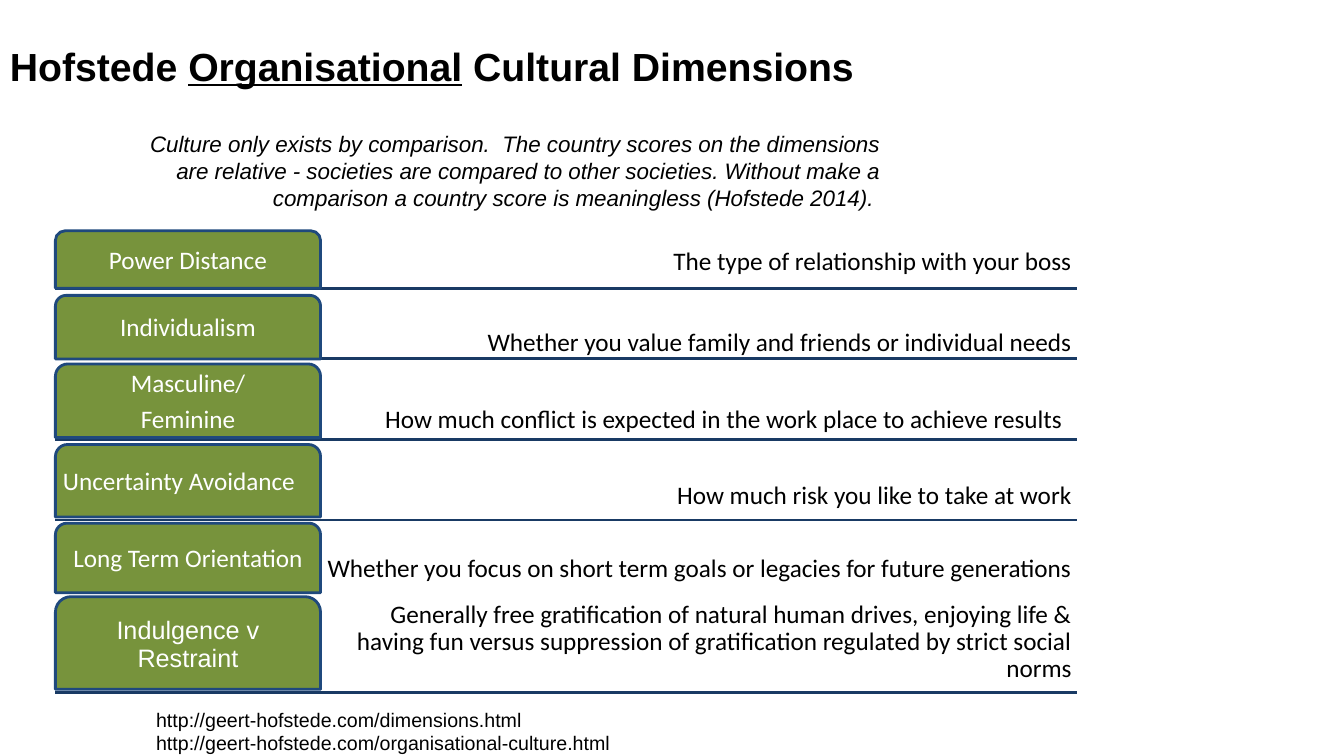
from pptx import Presentation
from pptx.dml.color import RGBColor
from pptx.enum import shapes, text
from pptx.oxml import ns, xmlchemy
from pptx.util import Pt

BLACK = RGBColor(0x00, 0x00, 0x00)
WHITE = RGBColor(0xFF, 0xFF, 0xFF)
GREEN = RGBColor(0x77, 0x93, 0x3C)
TAB_EDGE = RGBColor(0x1F, 0x49, 0x7D)
RULE_BLUE = RGBColor(0x19, 0x3A, 0x64)

LEFT, RIGHT, CENTER = (text.PP_ALIGN.LEFT, text.PP_ALIGN.RIGHT,
                       text.PP_ALIGN.CENTER)
TOP, MIDDLE, BOTTOM = (text.MSO_ANCHOR.TOP, text.MSO_ANCHOR.MIDDLE,
                       text.MSO_ANCHOR.BOTTOM)

ROW_LEFT, ROW_RIGHT = 39.6, 769
TAB_WIDTH = 189.4
MEANING_WIDTH = 539.3
ROW_INSET = 2.9

# Label, its format, tab top and height, meaning, its left, top and height
DIMENSIONS = [
    ("Power Distance", {}, 164.9, 41,
     "The type of relationship with your boss", 229, 154.8, 45),
    ("Individualism", {}, 211, 45.4,
     "Whether you value family and friends or individual needs",
     229, 191.5, 66.2),
    ("Masculine/\nFeminine", {}, 260, 52.6,
     "How much conflict is expected in the work place to achieve results",
     222.5, 247, 66.2),
    ("Uncertainty Avoidance", {"align": LEFT}, 317.5, 51.8,
     "How much risk you like to take at work", 229, 301, 66.2),
    ("Long Term Orientation", {}, 373.7, 49.7,
     "Whether you focus on short term goals or legacies for future generations",
     229, 352.8, 66.2),
    ("Indulgence v Restraint", {"font": "Arial"}, 426.2, 66.2,
     "Generally free gratification of natural human drives, enjoying life & "
     "having fun versus suppression of gratification regulated by strict "
     "social norms", 229, 424.8, 66.2),
]
RULE_HEIGHTS = [205.9, 256.3, 313.9, 371.5, 494.6]


def write(frame, content, font="Arial", size=18, color=BLACK, bold=False,
          italic=False, underlined=None, align=LEFT, anchor=TOP, inset=None,
          line_spacing=None, space_after=None):
    """Fill a text frame; each line of content is a paragraph."""
    frame.word_wrap = True
    frame.vertical_anchor = anchor
    if inset is not None:
        frame.margin_left = frame.margin_right = Pt(inset)
        frame.margin_top = frame.margin_bottom = Pt(inset)
    for index, line in enumerate(content.split("\n")):
        paragraph = frame.add_paragraph() if index else frame.paragraphs[0]
        paragraph.alignment = align
        paragraph.line_spacing = line_spacing
        if space_after is not None:
            paragraph.space_after = Pt(space_after)
        before, word, after = line.partition(underlined or "\n")
        for part in filter(None, (before, word, after)):
            run = paragraph.add_run()
            run.text = part
            run.font.name = font
            run.font.size = Pt(size)
            run.font.color.rgb = color
            run.font.bold = bold
            run.font.italic = italic
            run.font.underline = part == underlined


def write_row(frame, content, **changes):
    """Fill a text frame in the shared style of the dimension rows."""
    style = dict(font="Calibri", inset=ROW_INSET, line_spacing=0.9,
                 space_after=6.3)
    write(frame, content, **{**style, **changes})


def add_text_box(slide, left, top, width, height):
    box = slide.shapes.add_textbox(Pt(left), Pt(top), Pt(width), Pt(height))
    return box.text_frame


def add_rule(slide, height):
    rule = slide.shapes.add_connector(
        shapes.MSO_CONNECTOR.STRAIGHT,
        Pt(ROW_LEFT), Pt(height), Pt(ROW_RIGHT), Pt(height))
    rule.line.color.rgb = RULE_BLUE
    rule.line.width = Pt(2)
    rule._element.spPr.append(xmlchemy.OxmlElement("a:effectLst"))


def add_tab(slide, label, top, height, **changes):
    tab = slide.shapes.add_shape(
        shapes.MSO_SHAPE.ROUND_2_SAME_RECTANGLE,
        Pt(ROW_LEFT), Pt(top), Pt(TAB_WIDTH), Pt(height))
    tab.shadow.inherit = False
    tab.fill.solid()
    tab.fill.fore_color.rgb = GREEN
    tab.line.color.rgb = TAB_EDGE
    tab.line.width = Pt(2)
    write_row(tab.text_frame, label,
              **{"color": WHITE, "align": CENTER, "anchor": MIDDLE, **changes})


def main():
    deck = Presentation()
    deck.slide_width, deck.slide_height = Pt(960), Pt(540)
    slide = deck.slides.add_slide(deck.slide_layouts[6])

    # Title
    write(add_text_box(slide, 0, 30.2, 658.8, 76.3),
          "Hofstede Organisational Cultural Dimensions", size=28, bold=True,
          underlined="Organisational", line_spacing=0.9)

    # Dimension rows
    for height in RULE_HEIGHTS:
        add_rule(slide, height)
    for (label, label_format, tab_top, tab_height,
         meaning, left, top, height) in DIMENSIONS:
        write_row(add_text_box(slide, left, top, MEANING_WIDTH, height),
                  meaning, align=RIGHT, anchor=BOTTOM)
        add_tab(slide, label, tab_top, tab_height, **label_format)

    # Introductory remark
    write(add_text_box(slide, 86.4, 89.3, 549.4, 65.5),
          "Culture only exists by comparison.  The country scores on the "
          "dimensions are relative - societies are compared to other "
          "societies. Without make a comparison a country score is "
          "meaningless (Hofstede 2014). ",
          size=16, italic=True, align=RIGHT)

    # Sources
    write(add_text_box(slide, 104.4, 501.8, 599, 41),
          "http://geert-hofstede.com/dimensions.html\n"
          "http://geert-hofstede.com/organisational-culture.html", size=14)

    deck.save("out.pptx")


if __name__ == "__main__":
    main()
